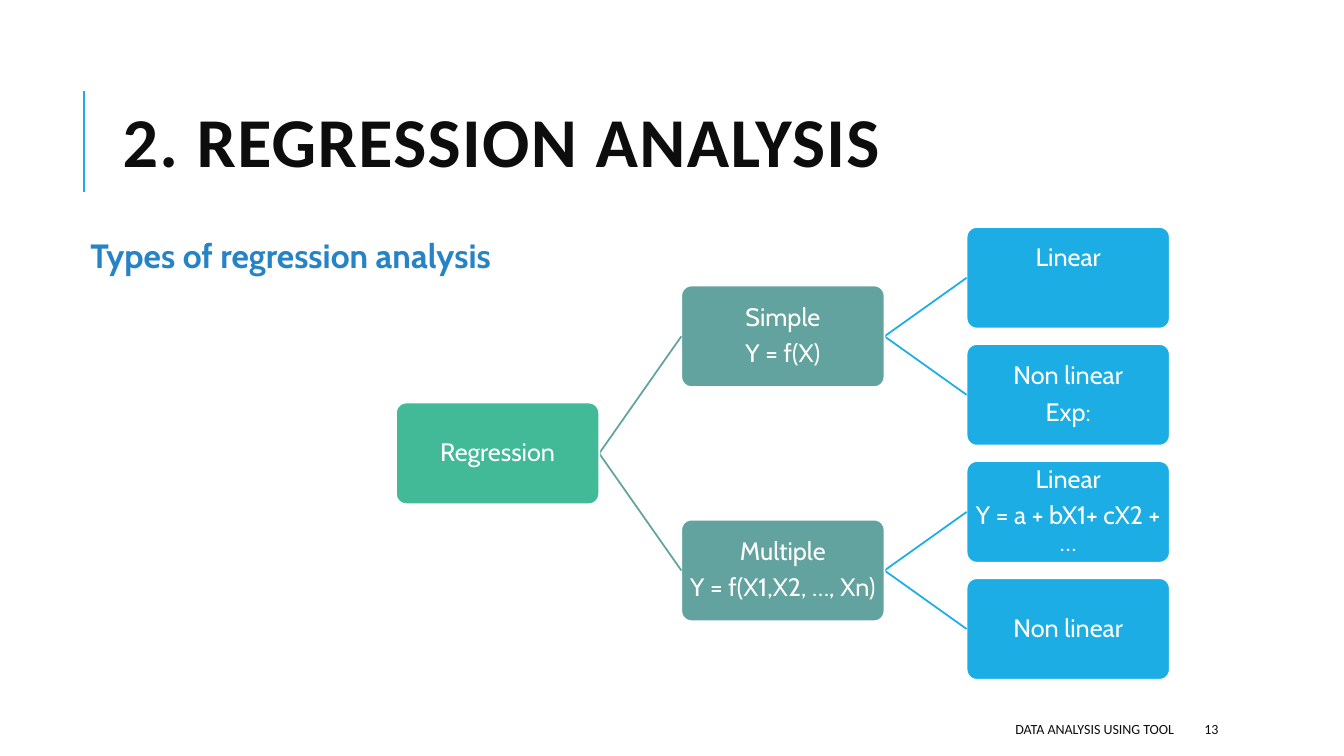
"""Build a slide that shows the types of regression analysis as a tree."""
from dataclasses import dataclass

from lxml.etree import SubElement
from pptx import Presentation
from pptx.dml.color import RGBColor
from pptx.enum.shapes import MSO_CONNECTOR, MSO_SHAPE
from pptx.enum.text import MSO_ANCHOR, PP_ALIGN
from pptx.oxml.ns import qn
from pptx.util import Cm, Pt


@dataclass(frozen=True)
class Theme:
    """Colours, fonts and type sizes of the slide."""
    ink: str = "0D0D0D"
    white: str = "FFFFFF"
    sky: str = "1CADE4"
    blue: str = "2683C6"
    levels: tuple = ("42BA97", "62A39F", "1CADE4")
    head: str = "Calibri"
    body: str = "Cabin"
    title: int = 50
    lead: int = 24
    node: int = 18
    foot: int = 10


@dataclass(frozen=True)
class Node:
    """One box of the tree with its branches."""
    text: str
    kids: tuple = ()
    lift: float = 0


THEME = Theme()
LEFT, TOP = 9.98, 7.0
WIDE, HIGH = 5.12, 2.56
STEP, PITCH = 7.19, 2.95
INSET = 0.1

TREE = Node("Regression", (
    Node("Simple\nY = f(X)", (
        Node("Linear", lift=0.96),
        Node("Non linear\nExp:"),
    )),
    Node("Multiple\nY = f(X1,X2, …, Xn)", (
        Node("Linear\nY = a + bX1+ cX2 + …"),
        Node("Non linear"),
    )),
))


def write(shape, text, size, color, font=THEME.head, bold=False, align=PP_ALIGN.LEFT,
          anchor=MSO_ANCHOR.MIDDLE, lines=1.0, after=0, track=0):
    """Fill a shape with one paragraph for each line of text."""
    frame = shape.text_frame
    frame.word_wrap = True
    frame.vertical_anchor = anchor
    for pos, line in enumerate(text.split("\n")):
        para = frame.add_paragraph() if pos else frame.paragraphs[0]
        para.alignment = align
        para.line_spacing = lines
        para.space_after = Pt(after)
        run = para.add_run()
        run.text = line
        run.font.name = font
        run.font.size = Pt(size)
        run.font.bold = bold
        run.font.color.rgb = RGBColor.from_string(color)
        if track:
            run.font._element.set("spc", str(track))


def label(slide, place, text, size, color, **style):
    """Add a text box at left, top, width and height."""
    box = slide.shapes.add_textbox(*map(Cm, place))
    write(box, text, size, color, **style)


def link(slide, start, end, color, width=1.25):
    """Draw a straight line between two points."""
    line = slide.shapes.add_connector(
        MSO_CONNECTOR.STRAIGHT, *map(Cm, (*start, *end)))
    line.line.color.rgb = RGBColor.from_string(color)
    line.line.width = Pt(width)
    SubElement(line._element.spPr, qn("a:effectLst"))


def card(slide, node, left, mid, color):
    """Draw the rounded box of a node."""
    box = slide.shapes.add_shape(
        MSO_SHAPE.ROUNDED_RECTANGLE, *map(Cm, (left, mid - HIGH / 2, WIDE, HIGH)))
    box.adjustments[0] = 0.1
    box.shadow.inherit = False
    box.fill.solid()
    box.fill.fore_color.rgb = RGBColor.from_string(color)
    box.line.color.rgb = RGBColor.from_string(THEME.white)
    box.line.width = Pt(1.25)
    frame = box.text_frame
    frame.margin_left = frame.margin_right = frame.margin_top = Cm(INSET)
    frame.margin_bottom = Cm(INSET + node.lift)
    write(box, node.text, THEME.node, THEME.white, font=THEME.body,
          align=PP_ALIGN.CENTER, lines=0.9, after=6.3)


def grow(slide, node, rows, level=0):
    """Draw a node centred on its branches and return its middle height."""
    left = LEFT + level * STEP
    mids = [grow(slide, kid, rows, level + 1) for kid in node.kids]
    mid = sum(mids) / len(mids) if mids else next(rows)
    for end in mids:
        link(slide, (left + WIDE, mid), (left + STEP, end), THEME.levels[level + 1])
    card(slide, node, left, mid, THEME.levels[level])
    return mid


def main():
    """Build the slide and save it."""
    deck = Presentation()
    deck.slide_width, deck.slide_height = Cm(33.87), Cm(19.05)
    slide = deck.slides.add_slide(deck.slide_layouts[6])
    link(slide, (2.12, 4.83), (2.12, 2.29), THEME.sky, 1.5)
    label(slide, (2.84, 1.63, 27, 4.17), "2. REGRESSION ANALYSIS", THEME.title,
          THEME.ink, bold=True, lines=0.8, track=100)
    label(slide, (13.46, 17.98, 16.38, 0.76), "DATA ANALYSIS USING TOOL",
          THEME.foot, THEME.ink, align=PP_ALIGN.RIGHT)
    label(slide, (30.1, 17.98, 2.69, 0.76), "13", THEME.foot, THEME.ink)
    label(slide, (2.03, 5.79, 14.33, 1.27), "Types of regression analysis",
          THEME.lead, THEME.blue, font=THEME.body, bold=True, anchor=MSO_ANCHOR.TOP)
    grow(slide, TREE, (TOP + row * PITCH for row in range(4)))
    deck.save("out.pptx")


if __name__ == "__main__":
    main()
